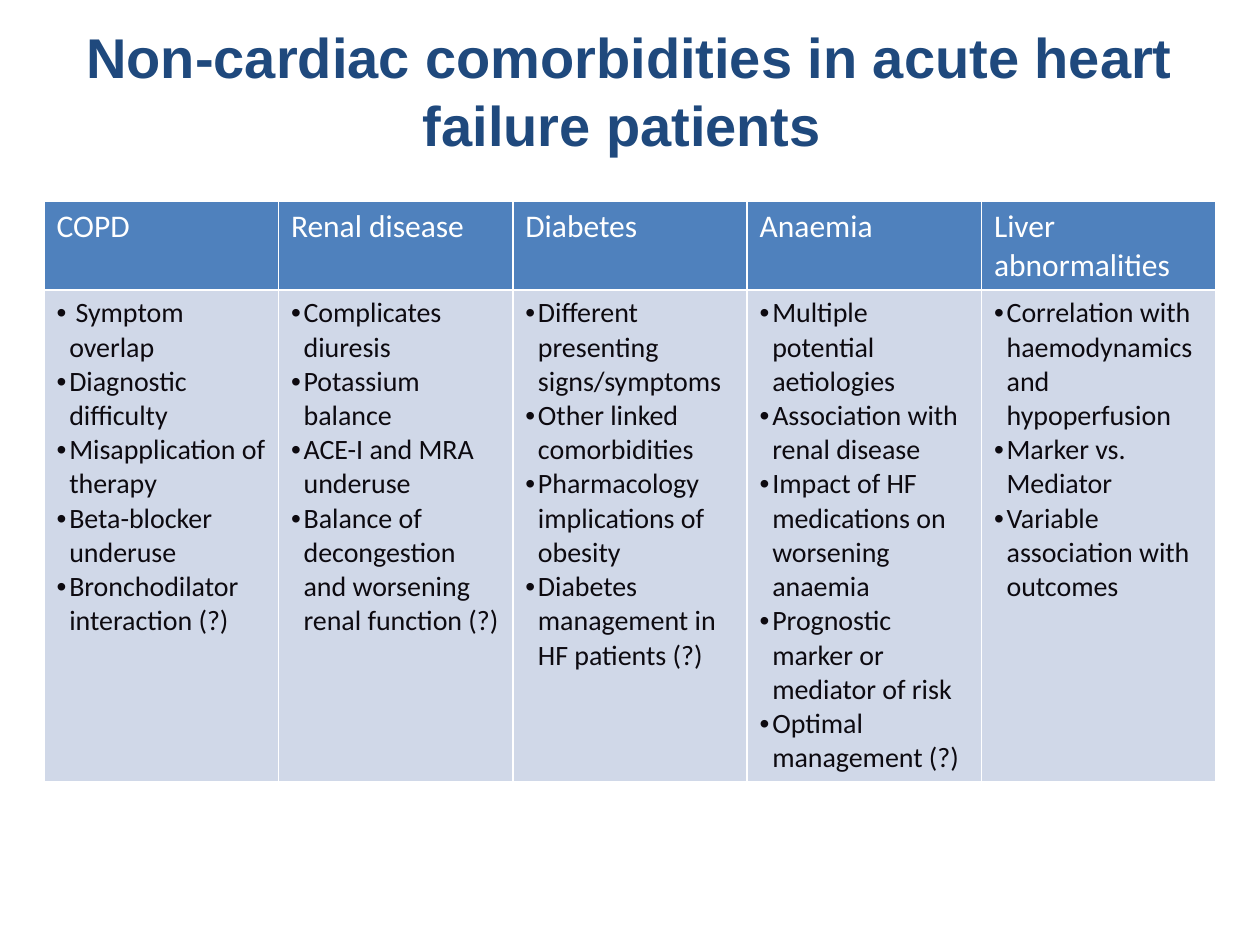
from dataclasses import dataclass

from lxml import etree
from pptx import Presentation
from pptx.dml.color import RGBColor
from pptx.enum.text import MSO_ANCHOR, PP_ALIGN
from pptx.oxml.ns import qn
from pptx.util import Inches, Pt

CENTER = PP_ALIGN.CENTER
MIDDLE = MSO_ANCHOR.MIDDLE

COLORS = {
    "title": "1F497D",
    "header": "4F81BD",
    "body": "D0D8E8",
    "text": "0D0A10",
    "white": "FFFFFF",
}


@dataclass
class Comorbidity:
    name: str
    points: list[str]


COMORBIDITIES = [
    Comorbidity("COPD", [
        " Symptom overlap",
        "Diagnostic difficulty",
        "Misapplication of therapy",
        "Beta-blocker underuse",
        "Bronchodilator interaction (?)",
    ]),
    Comorbidity("Renal disease", [
        "Complicates diuresis",
        "Potassium balance",
        "ACE-I and MRA underuse",
        "Balance of decongestion and worsening renal function (?)",
    ]),
    Comorbidity("Diabetes", [
        "Different presenting signs/symptoms",
        "Other linked comorbidities",
        "Pharmacology implications of obesity",
        "Diabetes management in HF patients (?)",
    ]),
    Comorbidity("Anaemia", [
        "Multiple potential aetiologies",
        "Association with renal disease",
        "Impact of HF medications on worsening anaemia",
        "Prognostic marker or mediator of risk",
        "Optimal management (?)",
    ]),
    Comorbidity("Liver abnormalities", [
        "Correlation with haemodynamics and hypoperfusion",
        "Marker vs. Mediator",
        "Variable association with outcomes",
    ]),
]


def add_run(paragraph, text: str, size: int, color: str,
            font: str = "Calibri", bold: bool = False) -> None:
    run = paragraph.add_run()
    run.text = text
    run.font.name = font
    run.font.size = Pt(size)
    run.font.bold = bold
    run.font.color.rgb = RGBColor.from_string(COLORS[color])


def add_bullet(paragraph) -> None:
    properties = paragraph._p.get_or_add_pPr()
    properties.set("marL", str(Inches(0.1)))
    properties.set("indent", str(Inches(-0.1)))
    etree.SubElement(properties, qn("a:buFont")).set("typeface", "Arial")
    etree.SubElement(properties, qn("a:buChar")).set("char", "•")


def style_cell(cell, fill: str) -> None:
    cell.fill.solid()
    cell.fill.fore_color.rgb = RGBColor.from_string(COLORS[fill])
    properties = cell._tc.get_or_add_tcPr()
    # Borders come before the fill in the cell properties
    for index, side in enumerate(("a:lnL", "a:lnR", "a:lnT", "a:lnB")):
        line = etree.Element(qn(side), w=str(Pt(1)))
        solid = etree.SubElement(line, qn("a:solidFill"))
        etree.SubElement(solid, qn("a:srgbClr")).set("val", COLORS["white"])
        properties.insert(index, line)


def add_title(slide, text: str) -> None:
    shape = slide.shapes.add_textbox(Inches(0), Inches(0.09), Inches(10), Inches(1.25))
    frame = shape.text_frame
    frame.word_wrap = True
    frame.vertical_anchor = MIDDLE
    paragraph = frame.paragraphs[0]
    paragraph.alignment = CENTER
    add_run(paragraph, text, 32, "title", "Arial", bold=True)


def add_comorbidity_table(slide, comorbidities: list[Comorbidity]) -> None:
    table = slide.shapes.add_table(
        2, len(comorbidities), Inches(0.35), Inches(1.6), Inches(9.3), Inches(4.6)
    ).table
    table.rows[0].height = Inches(0.7)
    table.rows[1].height = Inches(3.9)

    for column, comorbidity in enumerate(comorbidities):
        # Header
        header = table.cell(0, column)
        style_cell(header, "header")
        add_run(header.text_frame.paragraphs[0], comorbidity.name, 18, "white")

        # Bulleted points
        body = table.cell(1, column)
        style_cell(body, "body")
        frame = body.text_frame
        for index, point in enumerate(comorbidity.points):
            paragraph = frame.add_paragraph() if index else frame.paragraphs[0]
            add_bullet(paragraph)
            add_run(paragraph, point, 16, "text")


def main() -> None:
    presentation = Presentation()
    presentation.slide_width = Inches(10)
    presentation.slide_height = Inches(7.5)
    slide = presentation.slides.add_slide(presentation.slide_layouts[6])
    add_title(slide, "Non-cardiac comorbidities in acute heart failure patients ")
    add_comorbidity_table(slide, COMORBIDITIES)
    presentation.save("out.pptx")


if __name__ == "__main__":
    main()
